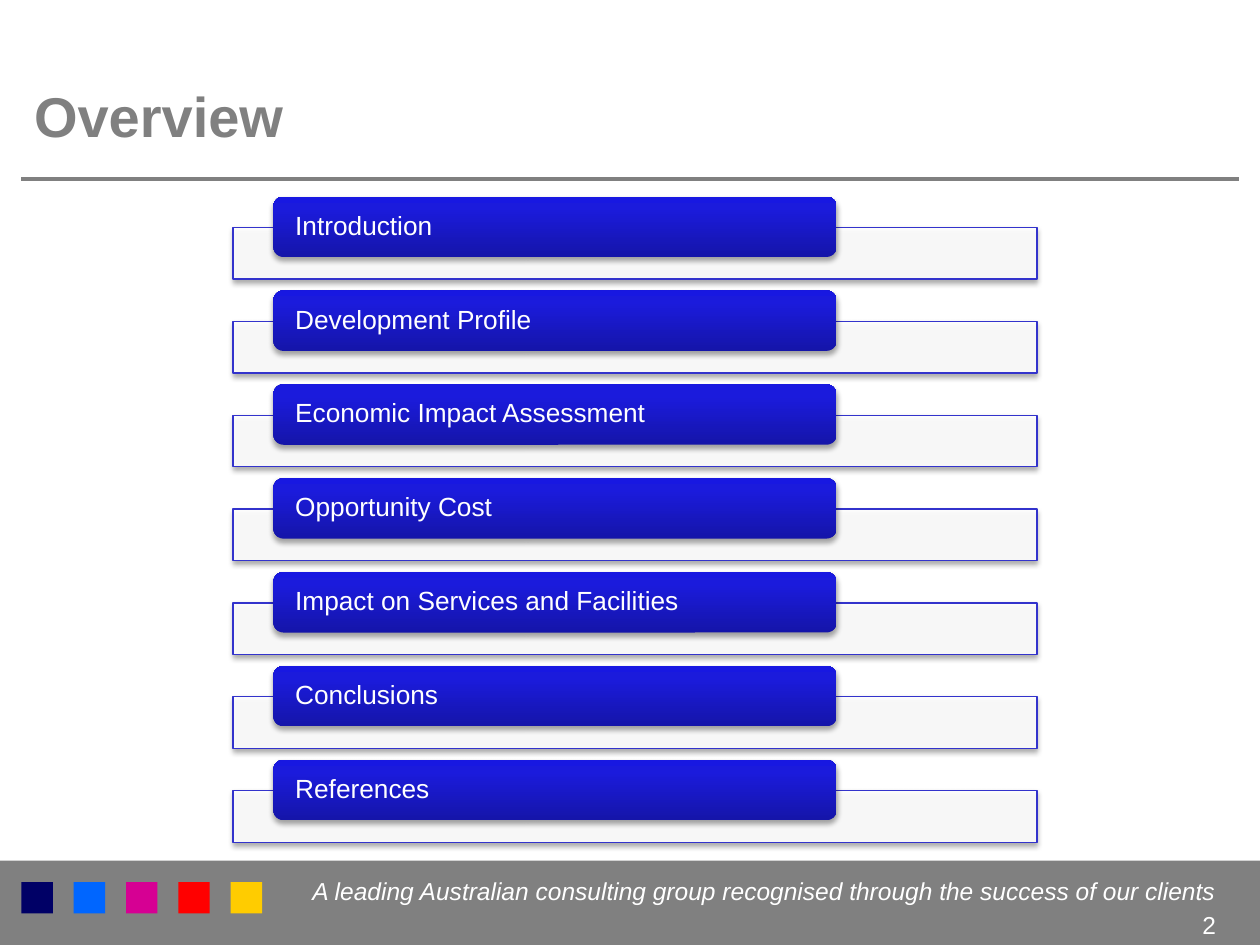
from lxml import etree
from pptx import Presentation
from pptx import util as u
from pptx.dml.color import RGBColor
from pptx.enum import shapes, text
from pptx.oxml import parse_xml
from pptx.oxml.ns import nsdecls, qn

COLORS = {
    "grey": "808080", "white": "FFFFFF", "outline": "3333CC", "shadow": "000000",
    "navy": "000066", "blue": "0066FF", "pink": "D60093", "red": "FF0000",
    "yellow": "FFCC00", "deep": "1515A9", "mid": "1B1BDC", "bright": "1818E1",
}
SQUARES = ["navy", "blue", "pink", "red", "yellow"]
TOPICS = [
    "Introduction", "Development Profile", "Economic Impact Assessment",
    "Opportunity Cost", "Impact on Services and Facilities", "Conclusions",
    "References",
]
TAGLINE = "A leading Australian consulting group recognised through the success of our clients"
FIRST_TOP, TOPIC_STEP = 1.56, 0.745


def rgb(name):
    return RGBColor.from_string(COLORS[name])


def write(box, words, size, color="white", bold=False, italic=False,
          align=text.PP_ALIGN.LEFT, anchor=text.MSO_ANCHOR.TOP,
          side=0.1, edge=0.05, spacing=None):
    frame = box.text_frame
    frame.word_wrap = True
    frame.vertical_anchor = anchor
    frame.margin_left = frame.margin_right = u.Inches(side)
    frame.margin_top = frame.margin_bottom = u.Inches(edge)
    para = frame.paragraphs[0]
    para.alignment = align
    para.line_spacing = spacing
    span = para.add_run()
    span.text = words
    span.font.name = "Arial"
    span.font.size = u.Pt(size)
    span.font.bold = bold
    span.font.italic = italic
    span.font.color.rgb = rgb(color)


def add_block(page, left, top, width, height, fill=None,
              kind=shapes.MSO_SHAPE.RECTANGLE):
    """Add a preset shape without outline or shadow."""
    block = page.shapes.add_shape(
        kind, u.Inches(left), u.Inches(top), u.Inches(width), u.Inches(height))
    block.shadow.inherit = False
    block.line.fill.background()
    if fill:
        block.fill.solid()
        block.fill.fore_color.rgb = rgb(fill)
    return block


def add_text(page, left, top, width, height, words, size, **style):
    box = page.shapes.add_textbox(
        u.Inches(left), u.Inches(top), u.Inches(width), u.Inches(height))
    write(box, words, size, **style)


def drop_shadow(block):
    effects = block.element.spPr.find(qn("a:effectLst"))
    effects.append(parse_xml(
        f'<a:outerShdw {nsdecls("a")} blurRad="{u.Pt(3.1)}" dist="{u.Pt(1.8)}" '
        f'dir="5400000" rotWithShape="0"><a:srgbClr val="{COLORS["shadow"]}">'
        '<a:alpha val="35000"/></a:srgbClr></a:outerShdw>'))


def fill_gradient(block, stops):
    """Fill from bottom to top with (percent, colour) stops."""
    block.fill.gradient()
    block.fill.gradient_angle = 90
    stop_list = block.element.spPr.find(qn("a:gradFill")).find(qn("a:gsLst"))
    for old in list(stop_list):
        stop_list.remove(old)
    for percent, color in stops:
        stop = etree.SubElement(stop_list, qn("a:gs"), pos=str(percent * 1000))
        etree.SubElement(stop, qn("a:srgbClr"), val=COLORS[color])


def add_topic(page, top, words):
    bar = add_block(page, 1.85, top + 0.245, 6.38, 0.41, "white")
    bar.line.color.rgb = rgb("outline")
    bar.line.width = u.Pt(0.75)
    white = bar.element.spPr.find(qn("a:solidFill"))[0]
    etree.SubElement(white, qn("a:alpha"), val="90000")
    drop_shadow(bar)

    label = add_block(page, 2.17, top, 4.47, 0.48,
                      kind=shapes.MSO_SHAPE.ROUNDED_RECTANGLE)
    fill_gradient(label, [(0, "deep"), (80, "mid"), (100, "bright")])
    drop_shadow(label)
    write(label, words, 15, anchor=text.MSO_ANCHOR.MIDDLE,
          side=0.15, edge=0, spacing=0.9)


def add_footer(page):
    add_block(page, 0, 6.83, 10, 0.67, "grey")
    for index, color in enumerate(SQUARES):
        add_block(page, 0.17 + index * 0.415, 7, 0.25, 0.25, color)
    add_text(page, 2.33, 6.9, 7.42, 0.33, TAGLINE, 14, italic=True,
             align=text.PP_ALIGN.RIGHT)
    add_text(page, 8.92, 7.17, 0.83, 0.33, "2", 14, align=text.PP_ALIGN.RIGHT)


def add_heading(page, words):
    title = page.shapes.title
    title.left, title.top = u.Inches(0.17), u.Inches(0.5)
    title.width, title.height = u.Inches(8.51), u.Inches(0.83)
    write(title, words, 32, color="grey", bold=True,
          anchor=text.MSO_ANCHOR.MIDDLE)
    rule = page.shapes.add_connector(
        shapes.MSO_CONNECTOR.STRAIGHT, u.Inches(0.17), u.Inches(1.42),
        u.Inches(9.83), u.Inches(1.42))
    rule.line.color.rgb = rgb("grey")
    rule.line.width = u.Pt(2)
    etree.SubElement(rule.element.spPr, qn("a:effectLst"))


def main():
    deck = Presentation()
    deck.slide_width, deck.slide_height = u.Inches(10), u.Inches(7.5)
    page = deck.slides.add_slide(deck.slide_layouts[5])
    add_footer(page)
    add_heading(page, "Overview")
    for index, topic in enumerate(TOPICS):
        add_topic(page, FIRST_TOP + index * TOPIC_STEP, topic)
    deck.save("out.pptx")


if __name__ == "__main__":
    main()
